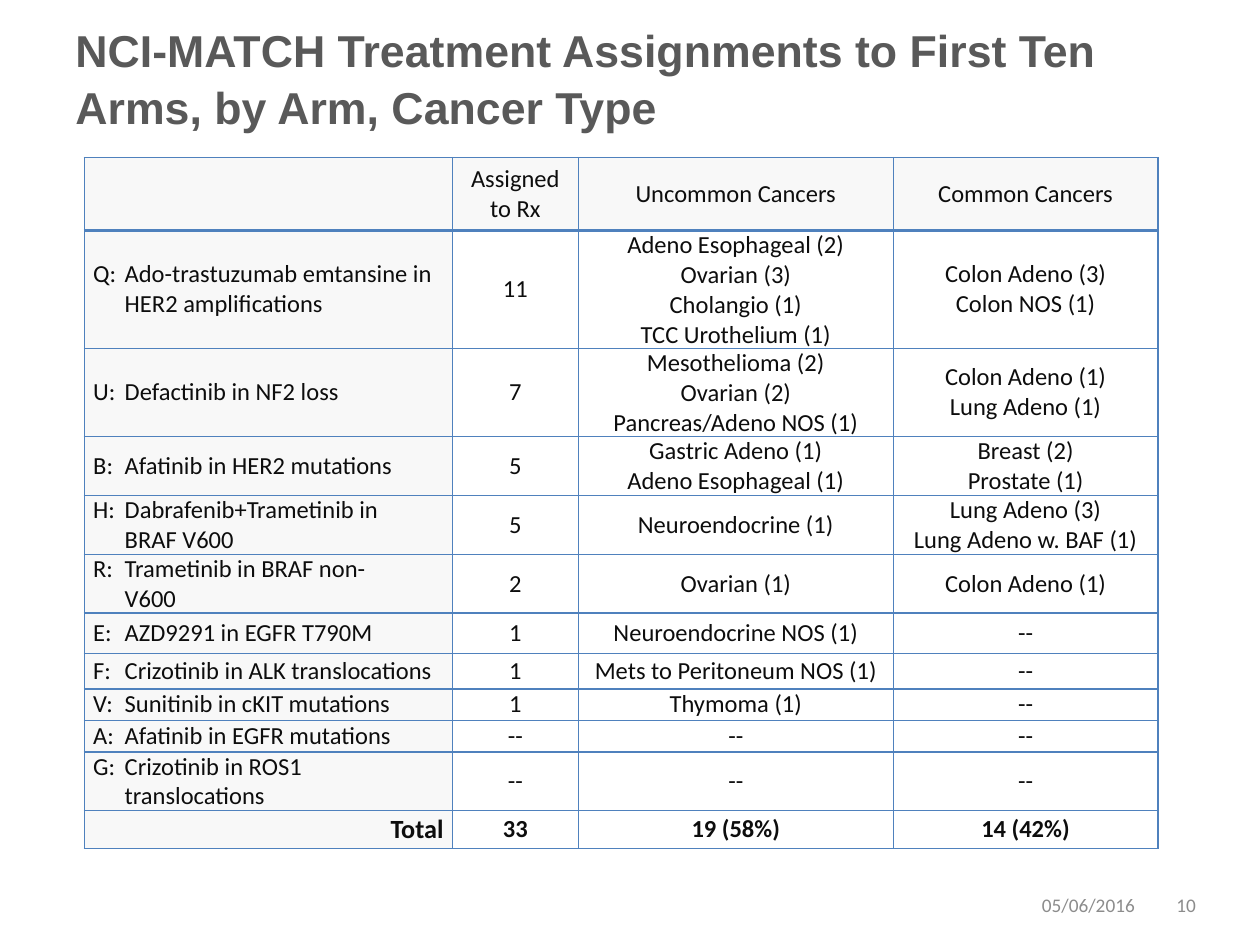
from lxml.etree import SubElement
from pptx import Presentation
from pptx.dml.color import RGBColor
from pptx.enum.text import MSO_ANCHOR as Anchor, PP_ALIGN as Align
from pptx.oxml.ns import qn
from pptx.util import Inches, Pt

TITLE_GRAY = RGBColor(0x59, 0x59, 0x59)
FOOTER_GRAY = RGBColor(0x8C, 0x8C, 0x8C)
INK = RGBColor(0x0D, 0x0D, 0x0D)
PALE = RGBColor(0xF8, 0xF8, 0xF8)
BLUE = RGBColor(0x4F, 0x81, 0xBD)

COLUMN_WIDTHS = [2.92, 1, 2.5, 2.1]
ROW_HEIGHTS = [0.58, 0.32, 0.35, 0.35, 0.32, 0.32, 0.32, 0.28, 0.25, 0.25, 0.25, 0.3]
ASSIGNMENTS = [
    ("", "Assigned to Rx", "Uncommon Cancers", "Common Cancers"),
    ("Q:\tAdo-trastuzumab emtansine in HER2 amplifications", "11",
     "Adeno Esophageal (2)\vOvarian (3)\vCholangio (1)\vTCC Urothelium (1)",
     "Colon Adeno (3)\vColon NOS (1)"),
    ("U:\tDefactinib in NF2 loss", "7",
     "Mesothelioma (2)\vOvarian (2)\vPancreas/Adeno NOS (1)",
     "Colon Adeno (1)\vLung Adeno (1)"),
    ("B:\tAfatinib in HER2 mutations", "5",
     "Gastric Adeno (1)\vAdeno Esophageal (1)", "Breast (2)\vProstate (1)"),
    ("H:\tDabrafenib+Trametinib in\vBRAF V600", "5",
     "Neuroendocrine (1)", "Lung Adeno (3)\vLung Adeno w. BAF (1)"),
    ("R:\tTrametinib in BRAF non-\vV600", "2", "Ovarian (1)", "Colon Adeno (1)"),
    ("E:\tAZD9291 in EGFR T790M", "1", "Neuroendocrine NOS (1)", "--"),
    ("F:\tCrizotinib in ALK translocations", "1", "Mets to Peritoneum NOS (1)", "--"),
    ("V:\tSunitinib in cKIT mutations", "1", "Thymoma (1)", "--"),
    ("A:\tAfatinib in EGFR mutations", "--", "--", "--"),
    ("G:\tCrizotinib in ROS1 translocations", "--", "--", "--"),
    ("Total", "33", "19 (58%)", "14 (42%)"),
]


def style_font(font, name, size, color, bold=False):
    font.name = name
    font.size = Pt(size)
    font.color.rgb = color
    font.bold = bold


def add_label(slide, box, text, name, size, color, bold=False, align=Align.LEFT):
    frame = slide.shapes.add_textbox(*map(Inches, box)).text_frame
    frame.word_wrap = True
    frame.vertical_anchor = Anchor.MIDDLE
    frame.text = text
    paragraph = frame.paragraphs[0]
    paragraph.alignment = align
    style_font(paragraph.runs[0].font, name, size, color, bold)
    return paragraph


def add_title(slide, box):
    title = add_label(slide, box,
                      "NCI-MATCH Treatment Assignments to First Ten Arms, by Arm, Cancer Type",
                      "Arial", 25.5, TITLE_GRAY, True)
    title.line_spacing = 1.05


def set_borders(cell, widths):
    properties = cell._tc.get_or_add_tcPr()
    for position, (side, width) in enumerate(widths.items()):
        line = SubElement(properties, qn(f"a:{side}"), w=str(Pt(width)))
        fill = SubElement(line, qn("a:solidFill"))
        SubElement(fill, qn("a:srgbClr"), val=str(BLUE))
        properties.remove(line)
        properties.insert(position, line)


def hang_indent(paragraph):
    properties = paragraph._p.get_or_add_pPr()
    properties.set("marL", str(Inches(0.25)))
    properties.set("indent", str(-Inches(0.25)))


def fill_cell(cell, text, row, column):
    is_header = row == 0
    is_total = row == len(ASSIGNMENTS) - 1
    is_arm = column == 0 and not is_header and not is_total
    cell.margin_left = cell.margin_right = Inches(0.07)
    cell.margin_top = cell.margin_bottom = 0
    cell.vertical_anchor = Anchor.MIDDLE
    if is_header or column == 0:
        cell.fill.solid()
        cell.fill.fore_color.rgb = PALE
    else:
        cell.fill.background()
    set_borders(cell, {"lnL": 1, "lnR": 1, "lnT": 2 if row == 1 else 1,
                       "lnB": 2 if is_header else 1})
    paragraph = cell.text_frame.paragraphs[0]
    paragraph.text = text
    if is_arm:
        hang_indent(paragraph)
        paragraph.alignment = Align.LEFT
    else:
        paragraph.alignment = Align.RIGHT if column == 0 else Align.CENTER
    size = 15 if is_total and column == 0 else 14
    for run in paragraph.runs:
        style_font(run.font, "Calibri", size, INK, is_total)


def add_assignments(slide, box):
    table = slide.shapes.add_table(len(ASSIGNMENTS), len(COLUMN_WIDTHS),
                                   *map(Inches, box)).table
    table.first_row = False
    table.horz_banding = False
    for column, width in zip(table.columns, COLUMN_WIDTHS):
        column.width = Inches(width)
    for row, height in zip(table.rows, ROW_HEIGHTS):
        row.height = Inches(height)
    for row, texts in enumerate(ASSIGNMENTS):
        for column, text in enumerate(texts):
            fill_cell(table.cell(row, column), text, row, column)


def add_footer(slide, box):
    left, top, width, height = box
    add_label(slide, (left + width - 0.4, top, 0.4, height), "10",
              "Calibri", 11, FOOTER_GRAY, align=Align.RIGHT)
    add_label(slide, (left, top, 1.1, height), "05/06/2016", "Calibri", 11, FOOTER_GRAY)


def main():
    deck = Presentation()
    deck.slide_width = Inches(10)
    deck.slide_height = Inches(7.5)
    slide = deck.slides.add_slide(deck.slide_layouts[6])
    add_title(slide, (0.5, 0.3, 9.08, 0.62))
    add_assignments(slide, (0.67, 1.25, 8.52, sum(ROW_HEIGHTS)))
    add_footer(slide, (8.17, 6.98, 1.42, 0.4))
    deck.save("out.pptx")


if __name__ == "__main__":
    main()
